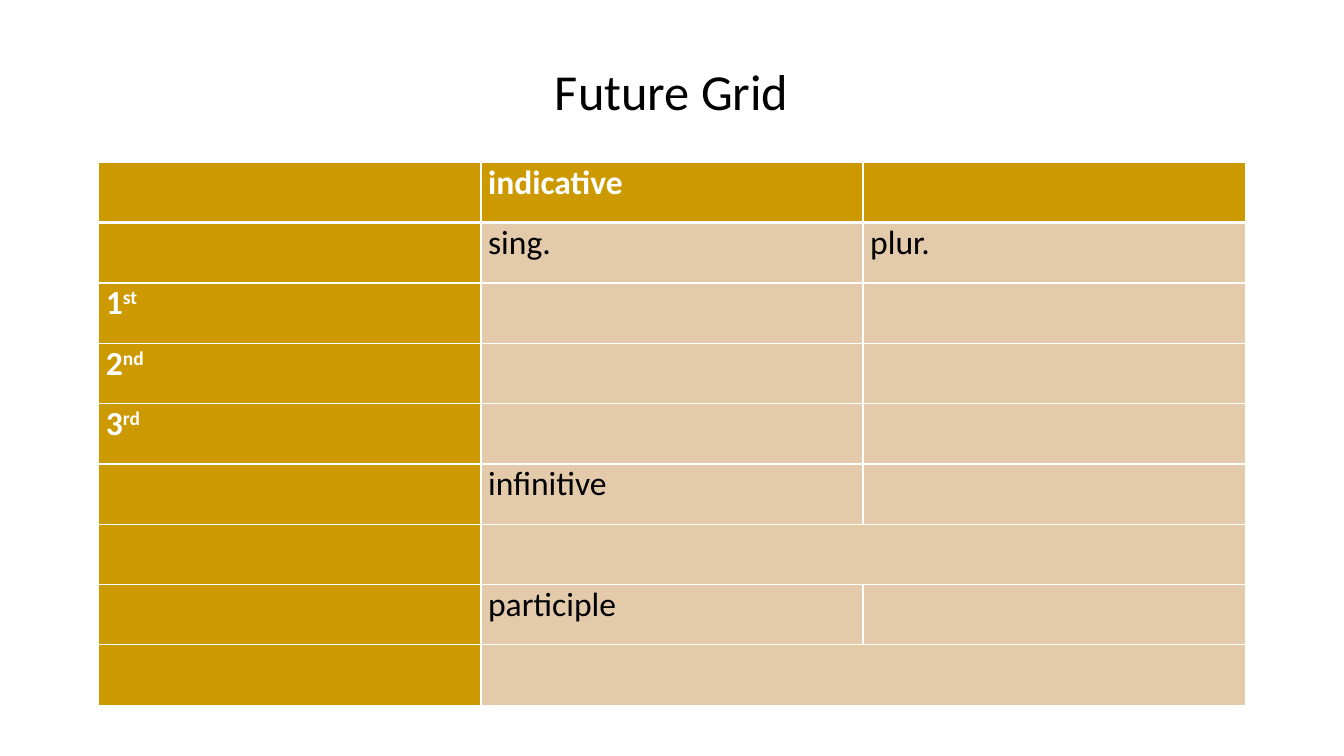
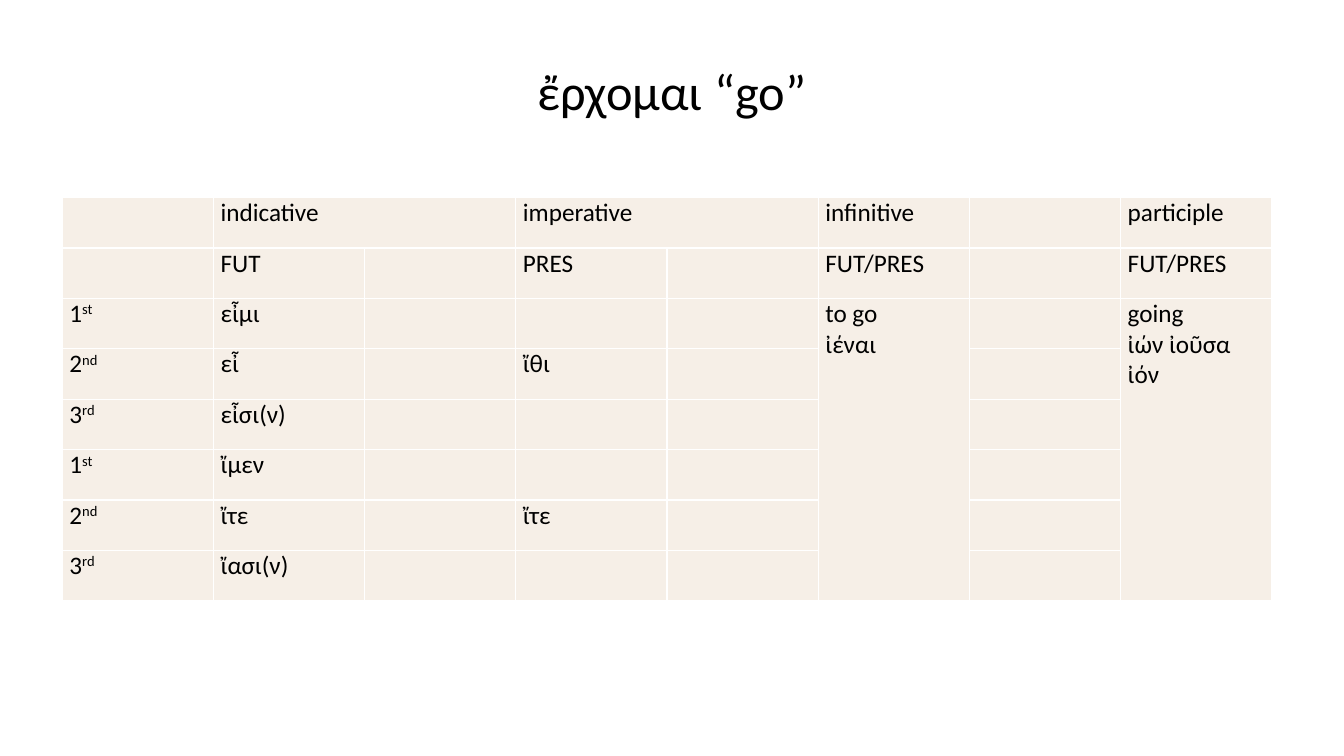
"""Builds two Greek verb form slides: an empty future grid and the forms of ἔρχομαι."""
from lxml import etree
from pptx import Presentation
from pptx import util as u
from pptx.dml.color import RGBColor
from pptx.enum import text
from pptx.oxml.ns import qn

THEME = {
    "font": "Calibri",
    "title_size": 36,
    "ink": "000000",
    "white": "FFFFFF",
    "gold": "CC9900",
    "tan": "E2CAAA",
    "cream": "F6EFE7",
    "rule": 1,
    "header_rule": 3,
}
ORDINALS = {"1st", "2nd", "3rd"}

SLIDES = [
    {
        "title": "Future Grid",
        "left": 2.49, "top": 4.09, "col": 9.63, "row": 1.52, "size": 24,
        "accent": "gold", "body": "tan",
        "cells": [
            ["", "indicative", ""],
            ["", "sing.", "plur."],
            ["1st", "", ""],
            ["2nd", "", ""],
            ["3rd", "", ""],
            ["", "infinitive", ""],
            ["", "", ""],
            ["", "participle", ""],
            ["", "", ""],
        ],
        "merges": [(6, 1, 6, 2), (8, 1, 8, 2)],
    },
    {
        "title": "ἔρχομαι “go”",
        "left": 1.57, "top": 4.98, "col": 3.81, "row": 1.27, "size": 18,
        "accent": None, "body": "cream",
        "cells": [
            ["", "indicative", "", "imperative", "", "infinitive", "", "participle"],
            ["", "FUT", "", "PRES", "", "FUT/PRES", "", "FUT/PRES"],
            ["1st", "εἶμι", "", "", "", "to go\vἰέναι", "", "going\vἰών ἰοῦσα ἰόν"],
            ["2nd", "εἶ", "", "ἴθι", "", "", "", ""],
            ["3rd", "εἶσι(ν)", "", "", "", "", "", ""],
            ["1st", "ἴμεν", "", "", "", "", "", ""],
            ["2nd", "ἴτε", "", "ἴτε", "", "", "", ""],
            ["3rd", "ἴασι(ν)", "", "", "", "", "", ""],
        ],
        "merges": [(0, 1, 0, 2), (0, 3, 0, 4), (2, 5, 7, 5), (2, 7, 7, 7)],
    },
]


def style_runs(p, size, color, bold=False):
    for r in p.runs:
        r.font.name = THEME["font"]
        r.font.size = u.Pt(size)
        r.font.bold = bold
        r.font.color.rgb = RGBColor.from_string(THEME[color])


def set_borders(cell, top, bottom):
    tcPr = cell._tc.get_or_add_tcPr()
    widths = {"lnL": THEME["rule"], "lnR": THEME["rule"], "lnT": top, "lnB": bottom}
    for side, width in widths.items():
        ln = etree.SubElement(tcPr, qn(f"a:{side}"), w=str(u.Pt(width)))
        fill = etree.SubElement(ln, qn("a:solidFill"))
        etree.SubElement(fill, qn("a:srgbClr"), val=THEME["white"])


prs = Presentation()
prs.slide_width, prs.slide_height = u.Cm(33.87), u.Cm(19.05)

for data in SLIDES:
    s = prs.slides.add_slide(prs.slide_layouts[6])

    tf = s.shapes.add_textbox(u.Cm(1.69), u.Cm(0.21), u.Cm(30.48), u.Cm(2.96)).text_frame
    tf.word_wrap = True
    tf.vertical_anchor = text.MSO_ANCHOR.BOTTOM
    tf.text = data["title"]
    p = tf.paragraphs[0]
    p.alignment = text.PP_ALIGN.CENTER
    style_runs(p, THEME["title_size"], "ink")

    cells = data["cells"]
    n_rows, n_cols = len(cells), len(cells[0])
    tbl = s.shapes.add_table(
        n_rows, n_cols, u.Cm(data["left"]), u.Cm(data["top"]),
        u.Cm(data["col"] * n_cols), u.Cm(data["row"] * n_rows)).table
    tbl.first_row = tbl.horz_banding = False
    for col in tbl.columns:
        col.width = u.Cm(data["col"])
    for row in tbl.rows:
        row.height = u.Cm(data["row"])

    header_rule = THEME["header_rule"] if data["accent"] else THEME["rule"]
    for i, values in enumerate(cells):
        for j, value in enumerate(values):
            cell = tbl.cell(i, j)
            accented = bool(data["accent"]) and (i == 0 or j == 0)
            set_borders(cell,
                        top=header_rule if i == 1 else THEME["rule"],
                        bottom=header_rule if i == 0 else THEME["rule"])
            cell.fill.solid()
            cell.fill.fore_color.rgb = RGBColor.from_string(
                THEME[data["accent"] if accented else data["body"]])
            cell.margin_left = cell.margin_right = u.Cm(0.18)
            cell.margin_top = cell.margin_bottom = 0
            if not value:
                continue
            p = cell.text_frame.paragraphs[0]
            if value in ORDINALS:
                p.text = value[0]
                r = p.add_run()
                r.text = value[1:]
                r._r.get_or_add_rPr().set("baseline", "30000")
            else:
                p.text = value
            style_runs(p, data["size"], "white" if accented else "ink", accented)

    for top, left, bottom, right in data["merges"]:
        tbl.cell(top, left).merge(tbl.cell(bottom, right))

prs.save("out.pptx")
